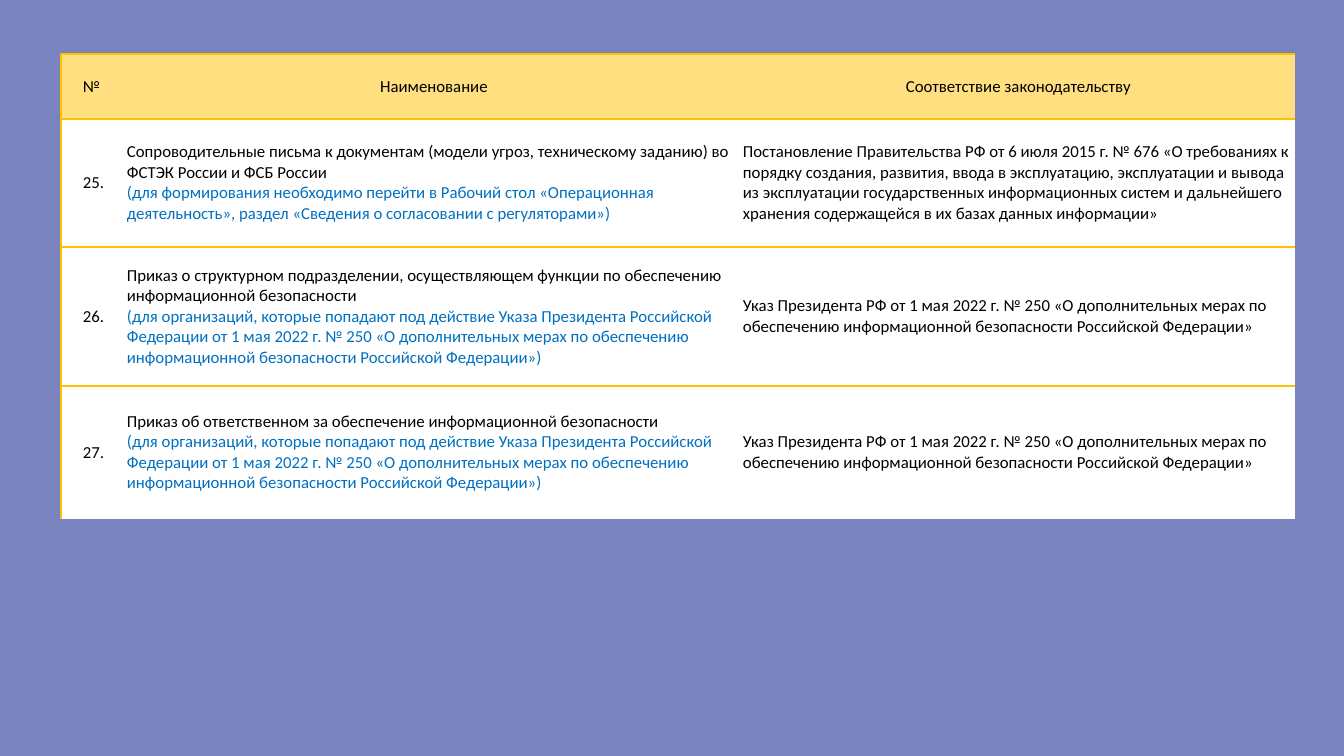
from lxml.etree import SubElement
from pptx import Presentation
from pptx.dml.color import RGBColor
from pptx.enum.text import MSO_ANCHOR, PP_ALIGN
from pptx.oxml.ns import qn
from pptx.util import Pt

PX = 914400 / 100.8
COLORS = {
    "back": "7883C0",
    "head": "FFDF7F",
    "body": "FFFFFF",
    "rule": "FFC000",
    "text": "000000",
    "note": "0070C0",
}

# Wording
ACT = "мерах по обеспечению информационной безопасности Российской Федерации»"
DECREE = f"Указ Президента РФ от 1 мая 2022 г. № 250 «О дополнительных {ACT}"
SCOPE = (
    "(для организаций, которые попадают под действие Указа Президента "
    f"Российской Федерации от 1 мая 2022 г. № 250 «О дополнительных {ACT})"
)
HEADS = ["№\u00a0", "Наименование", "Соответствие законодательству"]
ITEMS = [
    (
        "Сопроводительные письма к документам (модели угроз, техническому "
        "заданию) во ФСТЭК России и ФСБ России",
        "(для формирования необходимо перейти в Рабочий стол «Операционная "
        "деятельность», раздел «Сведения о согласовании с регуляторами»)",
        "Постановление Правительства РФ от 6 июля 2015 г. № 676 «О требованиях "
        "к порядку создания, развития, ввода в эксплуатацию, эксплуатации и "
        "вывода из эксплуатации государственных информационных систем и "
        "дальнейшего хранения содержащейся в их базах данных информации»",
    ),
    (
        "Приказ о структурном подразделении, осуществляющем функции по "
        "обеспечению информационной безопасности",
        SCOPE,
        DECREE,
    ),
    (
        "Приказ об ответственном за обеспечение информационной безопасности",
        SCOPE,
        DECREE,
    ),
]
FIRST = 25


def px(size):
    return round(size * PX)


def color(name):
    return RGBColor.from_string(COLORS[name])


def write(para, text, tone="text", size=12, font="Calibri", align=PP_ALIGN.LEFT):
    para.alignment = align
    run = para.add_run()
    run.text = text
    run.font.size = Pt(size)
    run.font.name = font
    run.font.color.rgb = color(tone)


class Page:
    """Holds the style and the current slide."""

    def __init__(self, deck):
        self.slide = deck.slides.add_slide(deck.slide_layouts[6])
        fill = self.slide.background.fill
        fill.solid()
        fill.fore_color.rgb = color("back")

    def edges(self, cell, shown):
        props = cell._tc.get_or_add_tcPr()
        for spot, side in enumerate("LRTB"):
            line = SubElement(props, qn(f"a:ln{side}"), w=str(Pt(1)))
            if side in shown:
                fill = SubElement(line, qn("a:solidFill"))
                SubElement(fill, qn("a:srgbClr"), val=COLORS["rule"])
            else:
                SubElement(line, qn("a:noFill"))
            props.insert(spot, line)

    def cell(self, cell, lines, fill, align, inset, shown):
        cell.fill.solid()
        cell.fill.fore_color.rgb = color(fill)
        cell.vertical_anchor = MSO_ANCHOR.MIDDLE
        cell.margin_left = cell.margin_right = px(inset)
        cell.margin_top = cell.margin_bottom = px(inset)
        frame = cell.text_frame
        for spot, (text, tone) in enumerate(lines):
            para = frame.add_paragraph() if spot else frame.paragraphs[0]
            write(para, text, tone=tone, align=align)
        self.edges(cell, shown)

    def table(self, left, top, widths, heights, rows):
        box = map(px, (left, top, sum(widths), sum(heights)))
        grid = self.slide.shapes.add_table(len(rows), len(widths), *box).table
        for col, width in zip(grid.columns, widths):
            col.width = px(width)
        for row, height in zip(grid.rows, heights):
            row.height = px(height)
        for r, row in enumerate(rows):
            for c, lines in enumerate(row):
                mid = r == 0 or c == 0
                shown = "T" + "L" * (c == 0) + "B" * (r < len(rows) - 1)
                self.cell(
                    grid.cell(r, c),
                    lines,
                    fill="body" if r else "head",
                    align=PP_ALIGN.CENTER if mid else PP_ALIGN.LEFT,
                    inset=0 if mid else 1,
                    shown=shown,
                )


def main():
    deck = Presentation()
    deck.slide_width, deck.slide_height = px(1344), px(756)
    page = Page(deck)

    # Table of documents and the acts they follow
    rows = [[[(head, "text")] for head in HEADS]]
    for num, (name, note, law) in enumerate(ITEMS, FIRST):
        names = [(name, "text"), (note, "note")]
        rows.append([[(f"{num}.", "text")], names, [(law, "text")]])
    page.table(61, 54, [65, 616, 553], [65, 128, 139, 133], rows)

    deck.save("out.pptx")


if __name__ == "__main__":
    main()
